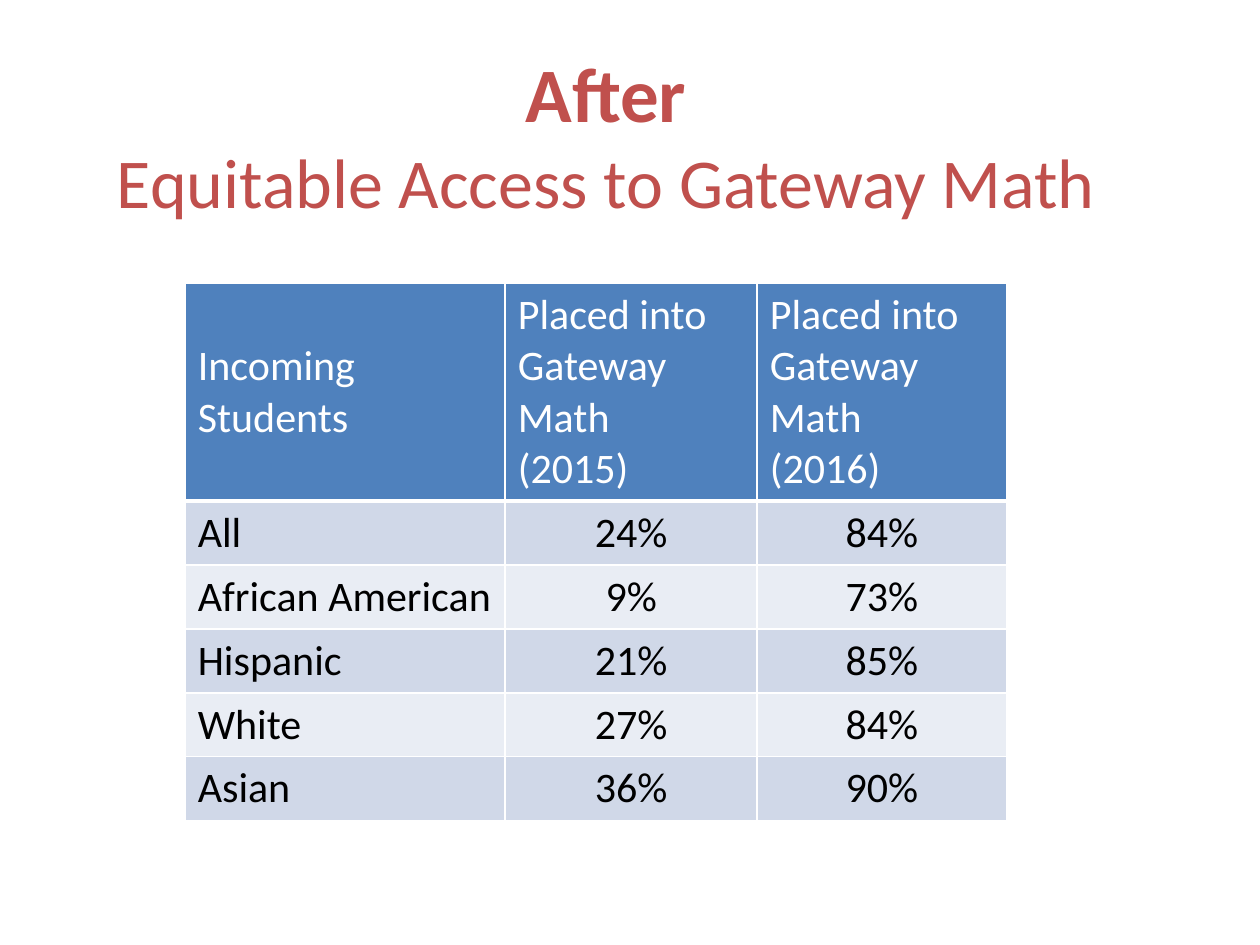
from lxml import etree
from pptx import Presentation
from pptx.dml.color import RGBColor
from pptx.enum.text import MSO_ANCHOR, PP_ALIGN
from pptx.oxml.ns import qn
from pptx.util import Inches, Pt

RED = RGBColor(0xC0, 0x50, 0x4D)
BLUE = RGBColor(0x4F, 0x81, 0xBD)
BAND_DARK = RGBColor(0xD0, 0xD8, 0xE8)
BAND_LIGHT = RGBColor(0xE9, 0xED, 0xF4)
WHITE = RGBColor(0xFF, 0xFF, 0xFF)
BLACK = RGBColor(0x00, 0x00, 0x00)

HEADER = ["Incoming Students",
          "Placed into Gateway Math\n(2015)",
          "Placed into Gateway Math\n(2016)"]
PLACEMENT = [
    ["All", "24%", "84%"],
    ["African American", "9%", "73%"],
    ["Hispanic", "21%", "85%"],
    ["White", "27%", "84%"],
    ["Asian", "36%", "90%"],
]


class SlideBuilder:
    """Holds the text style and the current slide."""

    font_name = "Calibri"
    cell_size = Pt(24)

    def __init__(self, deck):
        self.page = deck.slides.add_slide(deck.slide_layouts[5])

    def title(self, left, top, width, height, lines):
        """Fill the title with (text, size, bold) lines."""
        box = self.page.shapes.title
        box.left, box.top = Inches(left), Inches(top)
        box.width, box.height = Inches(width), Inches(height)
        box.text_frame.vertical_anchor = MSO_ANCHOR.MIDDLE
        para = box.text_frame.paragraphs[0]
        para.alignment = PP_ALIGN.CENTER
        para.font.name = self.font_name
        para.font.color.rgb = RED
        for index, (text, size, bold) in enumerate(lines):
            if index:
                para.add_line_break()
            span = para.add_run()
            span.text = text
            span.font.size, span.font.bold = Pt(size), bold

    def table(self, left, top, widths, row_height, rows):
        """Add a table with a header row and banded body rows."""
        frame = self.page.shapes.add_table(
            len(rows), len(widths), Inches(left), Inches(top),
            Inches(sum(widths)), Inches(row_height * len(rows)))
        table = frame.table
        table.first_row = table.horz_banding = False
        for column, width in zip(table.columns, widths):
            column.width = Inches(width)
        for r, values in enumerate(rows):
            for c, text in enumerate(values):
                if r == 0:
                    fill, color = BLUE, WHITE
                else:
                    fill, color = (BAND_DARK if r % 2 else BAND_LIGHT), BLACK
                centred = r > 0 and c > 0
                self.cell(table.cell(r, c), text, fill, color, centred)
                self.borders(table.cell(r, c), bottom=3 if r == 0 else 1)

    def cell(self, cell, text, fill, color, centred):
        cell.text = text
        cell.vertical_anchor = MSO_ANCHOR.MIDDLE
        cell.fill.solid()
        cell.fill.fore_color.rgb = fill
        for para in cell.text_frame.paragraphs:
            para.alignment = PP_ALIGN.CENTER if centred else PP_ALIGN.LEFT
            para.font.name = self.font_name
            para.font.size = self.cell_size
            para.font.color.rgb = color

    def borders(self, cell, bottom):
        """Draw white cell edges; they must come before the fill."""
        properties = cell._tc.get_or_add_tcPr()
        edges = [("a:lnL", 1), ("a:lnR", 1), ("a:lnT", 1), ("a:lnB", bottom)]
        for index, (tag, width) in enumerate(edges):
            line = etree.Element(qn(tag), w=str(Pt(width)))
            solid = etree.SubElement(line, qn("a:solidFill"))
            etree.SubElement(solid, qn("a:srgbClr"), val=str(WHITE))
            properties.insert(index, line)


def main():
    deck = Presentation()
    deck.slide_width, deck.slide_height = Inches(10), Inches(7.5)
    builder = SlideBuilder(deck)

    # Title
    builder.title(0.5, 0.3, 8.62, 1.53, [
        ("After", 44, True),
        ("Equitable Access to Gateway Math", 40, False),
    ])

    # Placement rates by student group
    builder.table(1.47, 2.25, [2.54, 2, 1.98], 0.41, [HEADER] + PLACEMENT)

    deck.save("out.pptx")


if __name__ == "__main__":
    main()
